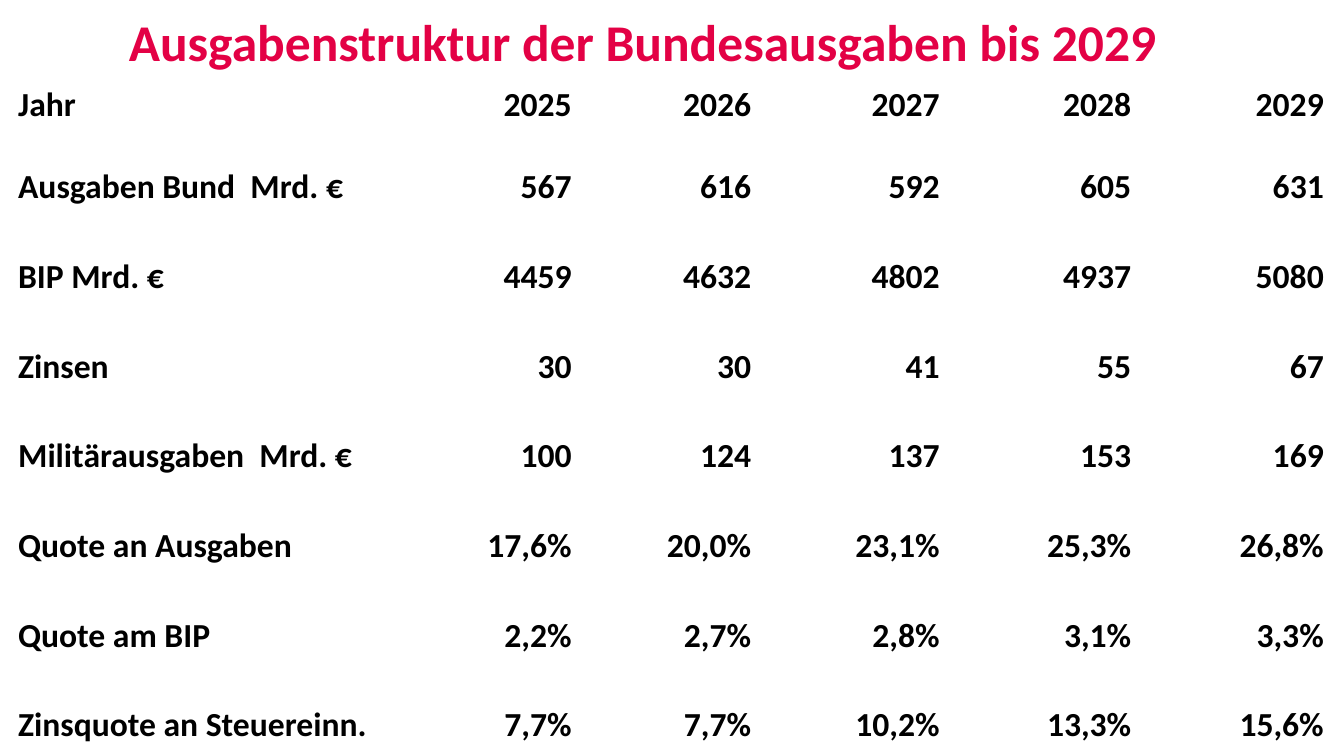
from pptx import Presentation
from pptx.dml.color import RGBColor
from pptx.enum.text import MSO_ANCHOR as Anchor, PP_ALIGN as Align
from pptx.util import Inches, Pt

COLORS = {"title": "E30145", "text": "000000"}
FONT = "Calibri"
COLUMN_WIDTHS = [3.63, 1.88, 1.78, 1.87, 1.9, 1.91]
HEADER_HEIGHT, ROW_HEIGHT = 1.2, 0.89
HEADER_GAP = 29.3  # one 24 pt line between the year and the first figure

YEARS = ["Jahr", "2025", "2026", "2027", "2028", "2029"]
FIGURES = [
    ["Ausgaben Bund  Mrd. €", "567", "616", "592", "605", "631"],
    ["BIP Mrd. €", "4459", "4632", "4802", "4937", "5080"],
    ["Zinsen", "30", "30", "41", "55", "67"],
    ["Militärausgaben  Mrd. €", "100", "124", "137", "153", "169"],
    ["Quote an Ausgaben", "17,6%", "20,0%", "23,1%", "25,3%", "26,8%"],
    ["Quote am BIP", "2,2%", "2,7%", "2,8%", "3,1%", "3,3%"],
    ["Zinsquote an Steuereinn.", "7,7%", "7,7%", "10,2%", "13,3%", "15,6%"],
]


def write(paragraph, text, size=24, color="text", align=Align.LEFT,
          space_before=0, line_spacing=1.0):
    paragraph.alignment = align
    paragraph.space_before = Pt(space_before)
    paragraph.line_spacing = line_spacing
    run = paragraph.add_run()
    run.text = text
    run.font.name = FONT
    run.font.size = Pt(size)
    run.font.bold = True
    run.font.color.rgb = RGBColor.from_string(COLORS[color])


def add_title(slide, left, top, width, height):
    box = slide.shapes.add_textbox(Inches(left), Inches(top), Inches(width), Inches(height))
    box.text_frame.word_wrap = True
    write(box.text_frame.paragraphs[0], "Ausgabenstruktur der Bundesausgaben bis 2029",
          size=36.8, color="title", line_spacing=0.9)


def fill_cell(cell, lines, align):
    """Writes the lines at the foot of an unfilled cell, set apart by HEADER_GAP."""
    cell.fill.background()
    cell.vertical_anchor = Anchor.BOTTOM
    cell.margin_left = cell.margin_right = cell.margin_top = Inches(0.01)
    cell.margin_bottom = 0
    frame = cell.text_frame
    for index, line in enumerate(lines):
        paragraph = frame.add_paragraph() if index else frame.paragraphs[0]
        write(paragraph, line, align=align, space_before=HEADER_GAP if index else 0)


def add_budget_table(slide, left, top):
    heights = [HEADER_HEIGHT] + [ROW_HEIGHT] * (len(FIGURES) - 1)
    table = slide.shapes.add_table(
        len(heights), len(COLUMN_WIDTHS), Inches(left), Inches(top),
        Inches(sum(COLUMN_WIDTHS)), Inches(sum(heights))).table
    table.first_row = table.horz_banding = False
    for column, width in zip(table.columns, COLUMN_WIDTHS):
        column.width = Inches(width)
    for row, height in zip(table.rows, heights):
        row.height = Inches(height)
    for row_index, values in enumerate(FIGURES):
        for column_index, value in enumerate(values):
            lines = [value] if row_index else [YEARS[column_index], value]
            align = Align.RIGHT if column_index else Align.LEFT
            fill_cell(table.cell(row_index, column_index), lines, align)


def main():
    presentation = Presentation()
    presentation.slide_width, presentation.slide_height = Inches(13.33), Inches(7.5)
    slide = presentation.slides.add_slide(presentation.slide_layouts[6])
    add_budget_table(slide, 0.17, 0.83)
    add_title(slide, 1.18, 0.12, 10.77, 0.71)
    presentation.save("out.pptx")


if __name__ == "__main__":
    main()
